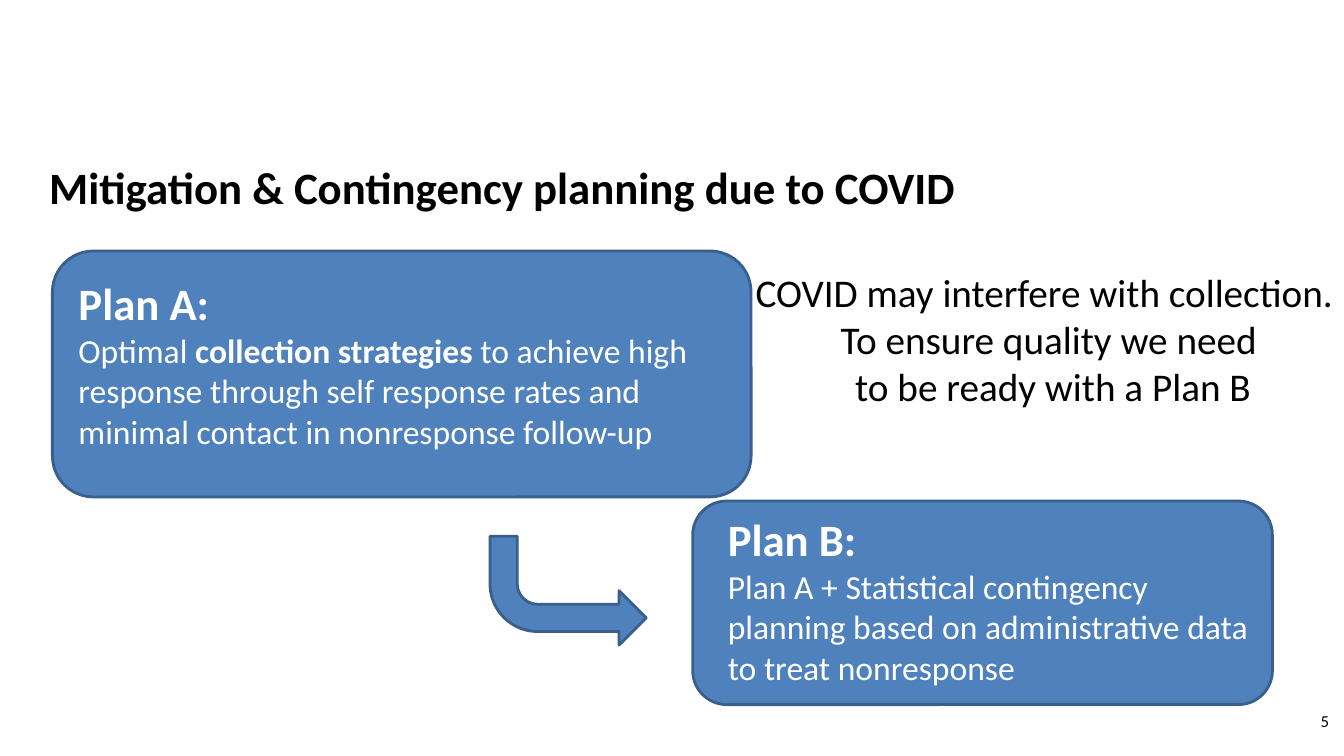
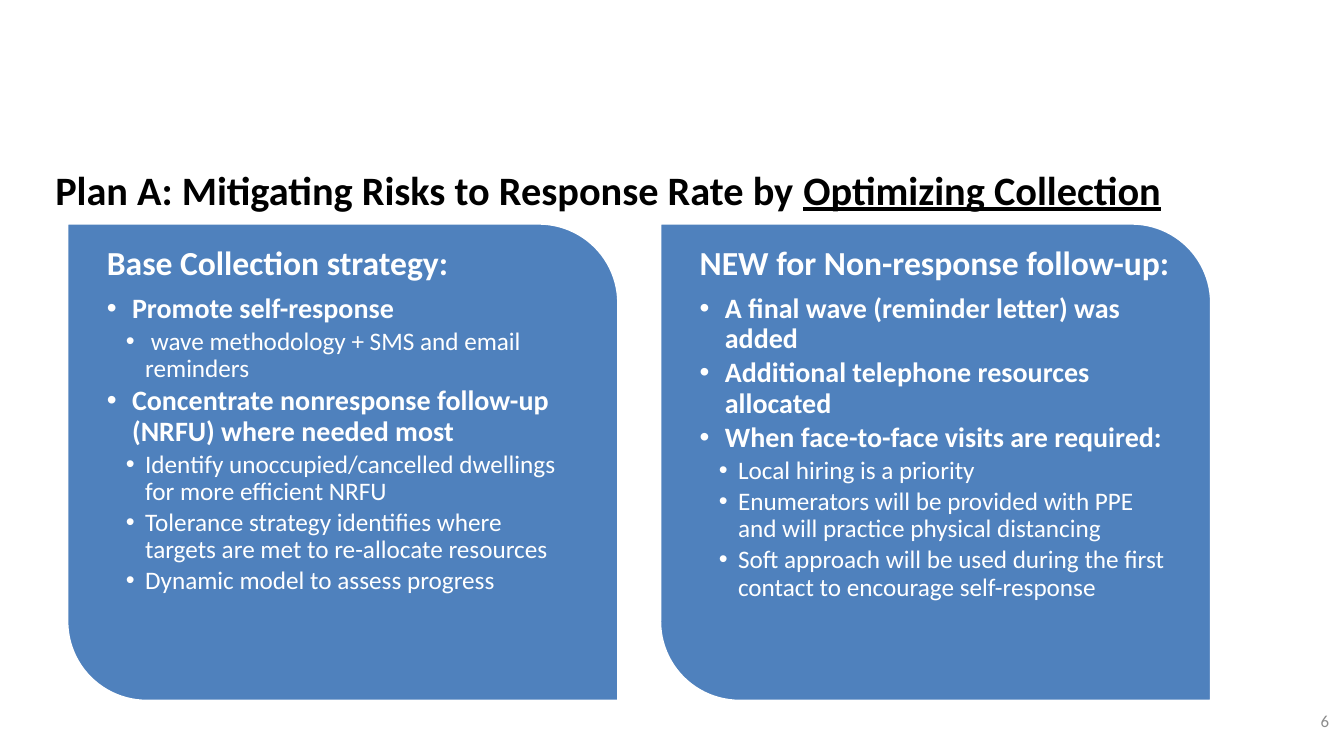
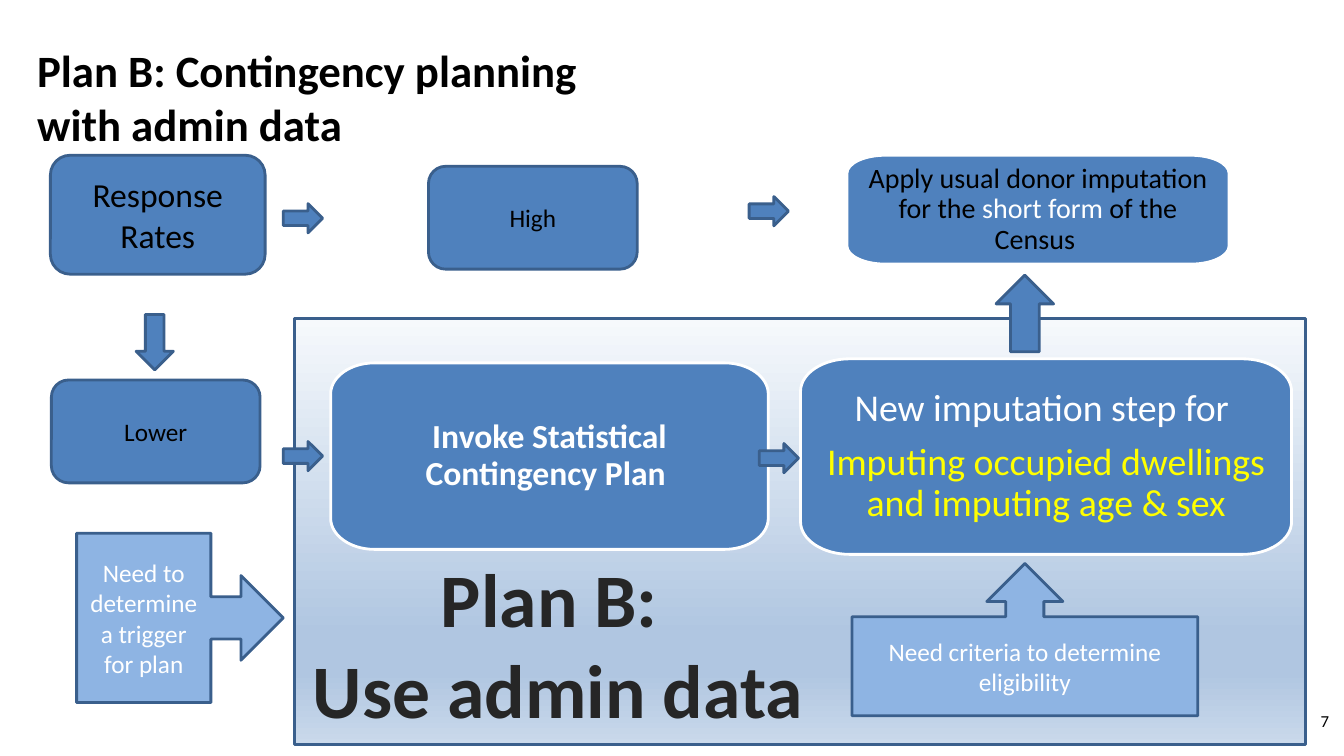
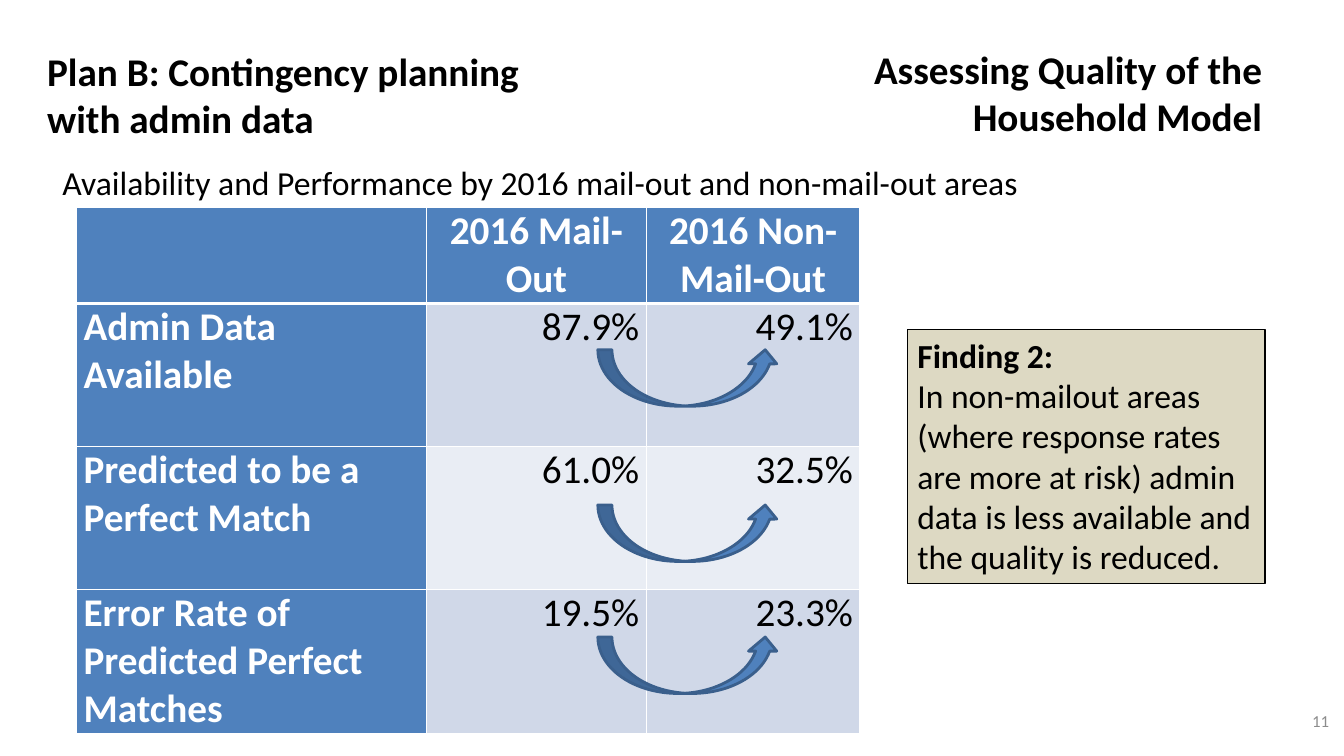
from lxml import etree
from pptx import Presentation
from pptx import util as u
from pptx.dml.color import RGBColor
from pptx.enum import shapes, text
from pptx.oxml import ns

HUE = dict(blue="4F81BD", edge="3A5F8C", pale="8EB4E3", white="FFFFFF", black="000000",
           grey="8C8C8C", dark="262626", yellow="FFFF00", sand="DDD9C3",
           band="D0D8E8", light="E9EDF4")
SHAPE = shapes.MSO_SHAPE
LEFT, MID, RIGHT = text.PP_ALIGN.LEFT, text.PP_ALIGN.CENTER, text.PP_ALIGN.RIGHT
CENTRE = text.MSO_ANCHOR.MIDDLE
BOLD = {"bold": True}

# Content: a paragraph is a string or a list of runs; a run is a string or (string, format)
PLANS = [
    ((0.52, 2.49, 6.93, 2.44), (0.68, 2.69, 6.67, 1.85), "Plan A:",
     ["Optimal", (" collection strategies ", BOLD),
      "to achieve high response through self response rates and minimal contact "
      "in nonresponse follow-up"]),
    ((6.87, 4.97, 5.75, 2.02), (7.12, 5.03, 5.5, 1.85), "Plan B:",
     ["Plan A + Statistical contingency planning based on administrative data "
      "to treat nonresponse"]),
]
REASON = ["COVID may interfere with collection. ", "To ensure quality we need",
          " to be ready with a Plan B"]
PANELS = [
    [(0, "Base Collection strategy:"),
     (1, "Promote self-response"),
     (2, " wave methodology + SMS and email reminders"),
     (1, "Concentrate nonresponse follow-up (NRFU) where needed most"),
     (2, "Identify unoccupied/cancelled dwellings for more efficient NRFU"),
     (2, "Tolerance strategy identifies where targets are met to re-allocate resources"),
     (2, "Dynamic model to assess progress")],
    [(0, "NEW for Non-response follow-up:"),
     (1, "A final wave (reminder letter) was added"),
     (1, "Additional telephone resources allocated"),
     (1, "When face-to-face visits are required:"),
     (2, "Local hiring is a priority"),
     (2, "Enumerators will be provided with PPE and will practice physical distancing"),
     (2, "Soft approach will be used during the first contact to encourage self-response")],
]
# Level: size, bold, space after as a share of size, left indent, hanging indent
LEVELS = [(24, True, 0.35, 0, 0), (20, True, 0.15, 0.25, 0.25), (18, False, 0.15, 0.38, 0.19)]
CARDS = [
    ((3.28, 3.6, 4.34, 1.85), ["Invoke Statistical Contingency Plan "],
     dict(size=24, bold=True, inset=0.2)),
    ((7.94, 3.56, 4.87, 1.94),
     ["New imputation step for ",
      [("Imputing occupied dwellings and imputing age & sex", {"color": "yellow"})]],
     dict(size=27, inset=0.22)),
    ((8.4, 1.54, 3.79, 1.08),
     [["Apply usual donor imputation for the ", ("short form ", {"color": "white"}),
       "of the Census "]],
     dict(size=20, color="black", inset=0.2)),
]
NODES = [
    (SHAPE.UP_ARROW_CALLOUT, (8.45, 5.59, 3.43, 1.51),
     "Need criteria to determine eligibility", 18, "white", "pale"),
    (SHAPE.ROUNDED_RECTANGLE, (0.5, 1.54, 2.13, 1.18), "Response Rates", 24, "black", "blue"),
    (SHAPE.ROUNDED_RECTANGLE, (4.25, 1.65, 2.07, 1.02), "High", 18, "black", "blue"),
    (SHAPE.ROUNDED_RECTANGLE, (0.51, 3.77, 2.07, 1.02), "Lower", 18, "black", "blue"),
    (SHAPE.RIGHT_ARROW_CALLOUT, (0.76, 5.29, 2.05, 1.68),
     "Need to determine a trigger for plan", 18, "white", "pale"),
]
ARROWS = [(SHAPE.RIGHT_ARROW, (x, y, 0.39, 0.29))
          for x, y in [(2.81, 2.02), (7.43, 1.95), (2.81, 4.38), (7.53, 4.4)]]
ARROWS += [(SHAPE.DOWN_ARROW, (1.35, 3.12, 0.37, 0.55)),
           (SHAPE.UP_ARROW, (9.88, 2.73, 0.57, 0.76))]
STOPS = [(0, "F6F9FC"), (74, "B0C6E1"), (83, "B0C6E1"), (100, "CAD9EB")]
RATES = [
    ("", "2016 Mail-Out", "2016 Non-Mail-Out"),
    ("Admin Data Available", "87.9%", "49.1%"),
    ("Predicted to be a Perfect Match", "61.0%", "32.5%"),
    ("Error Rate of Predicted Perfect Matches", "19.5%", "23.3%"),
]
WIDTHS, HEIGHTS = [3.47, 2.18, 2.12], [0.95, 1.42, 1.42, 1.43]
FINDING = [[("Finding 2:", BOLD)],
           "In non-mailout areas (where response rates are more at risk) admin data is "
           "less available and the quality is reduced."]


# Shared helpers
def rgb(name):
    return RGBColor.from_string(HUE[name])


def inch(at):
    return [u.Inches(v) for v in at]


def sub(node, tag, **vals):
    return etree.SubElement(node, ns.qn(tag), {k: str(v) for k, v in vals.items()})


def style(run, fmt):
    vals = {"name": "Calibri", **fmt}
    run.font.color.rgb = rgb(vals.pop("color"))
    vals["size"] = u.Pt(vals["size"])
    for key, val in vals.items():
        setattr(run.font, key, val)


def write(frame, paras, size=18, color="white", bold=False, align=LEFT, lead=None, after=None):
    base = dict(size=size, color=color, bold=bold)
    for i, runs in enumerate(paras):
        para = frame.add_paragraph() if i else frame.paragraphs[0]
        para.alignment = align
        if lead:
            para.line_spacing = lead
        if after:
            para.space_after = u.Pt(after * size)
        for part in [runs] if isinstance(runs, str) else runs:
            words, extra = (part, {}) if isinstance(part, str) else part
            run = para.add_run()
            run.text = words
            style(run, {**base, **extra})


def label(slide, at, paras, wrap=True, grow=False, anchor=text.MSO_ANCHOR.TOP, **fmt):
    frame = slide.shapes.add_textbox(*inch(at)).text_frame
    frame.word_wrap = wrap
    frame.vertical_anchor = anchor
    if grow:
        frame.auto_size = text.MSO_AUTO_SIZE.SHAPE_TO_FIT_TEXT
    write(frame, paras, **fmt)
    return frame


def paint(shape, fill="blue", line="edge", width=2):
    shape.shadow.inherit = False
    shape.fill.solid()
    shape.fill.fore_color.rgb = rgb(fill)
    shape.line.color.rgb = rgb(line)
    shape.line.width = u.Pt(width)
    return shape


def draw(slide, kind, at, turn=0, flip=False, **look):
    shape = paint(slide.shapes.add_shape(kind, *inch(at)), **look)
    shape.rotation = turn
    if flip:
        shape._element.spPr.find(ns.qn("a:xfrm")).set("flipV", "1")
    return shape


def bend(shape):
    """Turn every other segment of an eight-point outline into a corner curve."""
    nodes = list(shape._element.iter(ns.qn("a:moveTo"), ns.qn("a:lnTo")))
    spots = [(int(node[0].get("x")), int(node[0].get("y"))) for node in nodes]
    for i in range(1, len(nodes), 2):
        (ax, ay), (bx, by) = spots[i - 1], spots[i]
        cx, cy = (ax, by) if i % 4 == 1 else (bx, ay)
        curve = etree.Element(ns.qn("a:cubicBezTo"))
        for x, y in [(ax, ay), (bx, by)]:
            sub(curve, "a:pt", x=round(x + 0.55 * (cx - x)), y=round(y + 0.55 * (cy - y)))
        sub(curve, "a:pt", x=bx, y=by)
        nodes[i].getparent().replace(nodes[i], curve)


def card(slide, at, paras, inset, **fmt):
    """Box with elliptical corners, a tenth of the width by a sixth of the height."""
    x, y, w, h = at
    rx, ry, r, b = w / 10, h / 6, x + w, y + h
    spots = [inch(spot) for spot in [
        (x, y + ry), (x + rx, y), (r - rx, y), (r, y + ry),
        (r, b - ry), (r - rx, b), (x + rx, b), (x, b - ry), (x, y + ry)]]
    pen = slide.shapes.build_freeform(*spots[0])
    pen.add_line_segments(spots[1:], close=True)
    shape = paint(pen.convert_to_shape(), line="white")
    bend(shape)
    frame = shape.text_frame
    frame.word_wrap = True
    frame.vertical_anchor = CENTRE
    for side in ("left", "right", "top", "bottom"):
        setattr(frame, "margin_" + side, u.Inches(inset))
    write(frame, paras, align=MID, lead=0.9, after=0.35, **fmt)


def title(slide, at, paras, size=32, **more):
    return label(slide, at, paras, size=size, color="black", bold=True, **more)


def page(deck, num, color):
    slide = deck.slides.add_slide(deck.slide_layouts[6])
    label(slide, (10.17, 6.95, 3.11, 0.4), [num], anchor=CENTRE,
          size=12, color=color, align=RIGHT)
    return slide


# Slides
def plans(deck):
    slide = page(deck, "5", "black")
    title(slide, (0.39, 1, 9.97, 1.71),
          ["Mitigation & Contingency planning due to COVID"], anchor=CENTRE)
    for box, inner, head, body in PLANS:
        draw(slide, SHAPE.ROUNDED_RECTANGLE, box)
        label(slide, inner, [[(head, {"size": 32, "bold": True})], body], grow=True, size=24)
    draw(slide, SHAPE.BENT_ARROW, (4.86, 5.32, 1.55, 1.08), flip=True)
    label(slide, (7.36, 2.61, 6.08, 1.51), REASON, wrap=False, grow=True,
          size=28, color="black", align=MID)


def collect(deck):
    slide = page(deck, "6", "grey")
    title(slide, (0.45, 1.54, 11.58, 0.67),
          [["Plan A: Mitigating Risks to Response Rate by ",
            ("Optimizing Collection", {"underline": True})]], size=28.8, anchor=CENTRE)
    for col, items in enumerate(PANELS):
        shift = col * 5.88
        draw(slide, SHAPE.ROUND_2_DIAG_RECTANGLE, (1.03 + shift, 1.85, 4.74, 5.47),
             turn=270, line="white")
        frame = label(slide, (0.89 + shift, 2.44, 5, 4.28),
                      [[(words, dict(size=LEVELS[lvl][0], bold=LEVELS[lvl][1]))]
                       for lvl, words in items], lead=0.9)
        frame.margin_left = frame.margin_right = u.Inches(0.17)
        frame.margin_top = frame.margin_bottom = 0
        for para, (lvl, _) in zip(frame.paragraphs, items):
            size, _, after, left, hang = LEVELS[lvl]
            para.level = lvl
            para.space_after = u.Pt(size * after)
            if lvl:
                props = para._p.get_or_add_pPr()
                props.set("marL", str(u.Inches(left)))
                props.set("indent", str(-u.Inches(hang)))
                sub(props, "a:buFont", typeface="Arial")
                sub(props, "a:buChar", char="•")


def flow(deck):
    slide = page(deck, "7", "black")
    panel = draw(slide, SHAPE.RECTANGLE, (2.92, 3.16, 10.03, 4.23))
    panel.fill.gradient()
    panel.fill.gradient_angle = 270
    stops = panel._element.spPr.find(".//" + ns.qn("a:gsLst"))
    for stop in list(stops):
        stops.remove(stop)
    for pos, tint in STOPS:
        sub(sub(stops, "a:gs", pos=pos * 1000), "a:srgbClr", val=tint)
    title(slide, (0.27, 0.58, 5.59, 0.76),
          ["Plan B: Contingency planning with admin data"], anchor=CENTRE)
    for at, paras, fmt in CARDS:
        card(slide, at, paras, **fmt)
    for kind, at, words, size, color, fill in NODES:
        frame = draw(slide, kind, at, fill=fill).text_frame
        frame.word_wrap = True
        frame.vertical_anchor = CENTRE
        write(frame, [words], size=size, color=color, align=MID)
    for kind, at in ARROWS:
        draw(slide, kind, at)
    big = label(slide, (2.88, 5.43, 5.31, 1.92), ["Plan B: ", "Use admin data"], wrap=False,
                grow=True, size=54, color="dark", bold=True, align=MID)
    for para in big.paragraphs:
        props = para.runs[0]._r.get_or_add_rPr()
        rim = sub(props, "a:ln", w=u.Pt(1.06))
        sub(sub(rim, "a:solidFill"), "a:srgbClr", val=HUE["white"])
        props.insert(0, rim)


def rates(deck):
    slide = page(deck, "11", "grey")
    label(slide, (0.52, 1.56, 9.86, 4.37),
          ["Availability and Performance by 2016 mail-out and non-mail-out areas"],
          size=24, color="black")
    grid = slide.shapes.add_table(len(RATES), len(WIDTHS), *inch(
        (0.76, 2.06, sum(WIDTHS), sum(HEIGHTS)))).table
    for col, wide in zip(grid.columns, WIDTHS):
        col.width = u.Inches(wide)
    for row, high in zip(grid.rows, HEIGHTS):
        row.height = u.Inches(high)
    for r, row in enumerate(RATES):
        for c, words in enumerate(row):
            cell = grid.cell(r, c)
            head = r == 0 or c == 0
            cell.margin_left = cell.margin_right = u.Inches(0.07)
            cell.margin_top = cell.margin_bottom = 0
            props = cell._tc.get_or_add_tcPr()
            for side in "LRTB":
                thick = (r, side) in [(0, "B"), (1, "T")]
                edge = sub(props, "a:ln" + side, w=u.Pt(3 if thick else 1))
                sub(sub(edge, "a:solidFill"), "a:srgbClr", val=HUE["white"])
            cell.fill.solid()
            cell.fill.fore_color.rgb = rgb("blue" if head else "band" if r % 2 else "light")
            if words:
                write(cell.text_frame, [words], size=28, bold=head,
                      color="white" if head else "black",
                      align=LEFT if c == 0 else MID if r == 0 else RIGHT)
    title(slide, (0.37, 0.42, 4.93, 1.04), ["Plan B: Contingency planning", "with admin data"],
          size=28, wrap=False, grow=True)
    right = title(slide, (8.57, 0.4, 4.09, 1.04),
                  ["Assessing Quality of the", "Household Model"],
                  size=28, wrap=False, grow=True)
    last = right.paragraphs[1]
    last.alignment, last.level = RIGHT, 1
    last._p.get_or_add_pPr().set("marL", str(u.Inches(0.5)))
    for top in (2.85, 4.39, 5.7):
        draw(slide, SHAPE.CURVED_LEFT_ARROW, (6.55, top, 0.56, 1.8), turn=90, flip=True)
    note = draw(slide, SHAPE.RECTANGLE, (9, 3.27, 3.55, 2.52), fill="sand",
                line="black", width=1.25).text_frame
    note.word_wrap = True
    note.auto_size = text.MSO_AUTO_SIZE.SHAPE_TO_FIT_TEXT
    note.vertical_anchor = text.MSO_ANCHOR.TOP
    write(note, FINDING, size=24, color="black")


def main():
    deck = Presentation()
    deck.slide_width, deck.slide_height = inch((13.33, 7.5))
    for make in (plans, collect, flow, rates):
        make(deck)
    deck.save("out.pptx")


if __name__ == "__main__":
    main()
